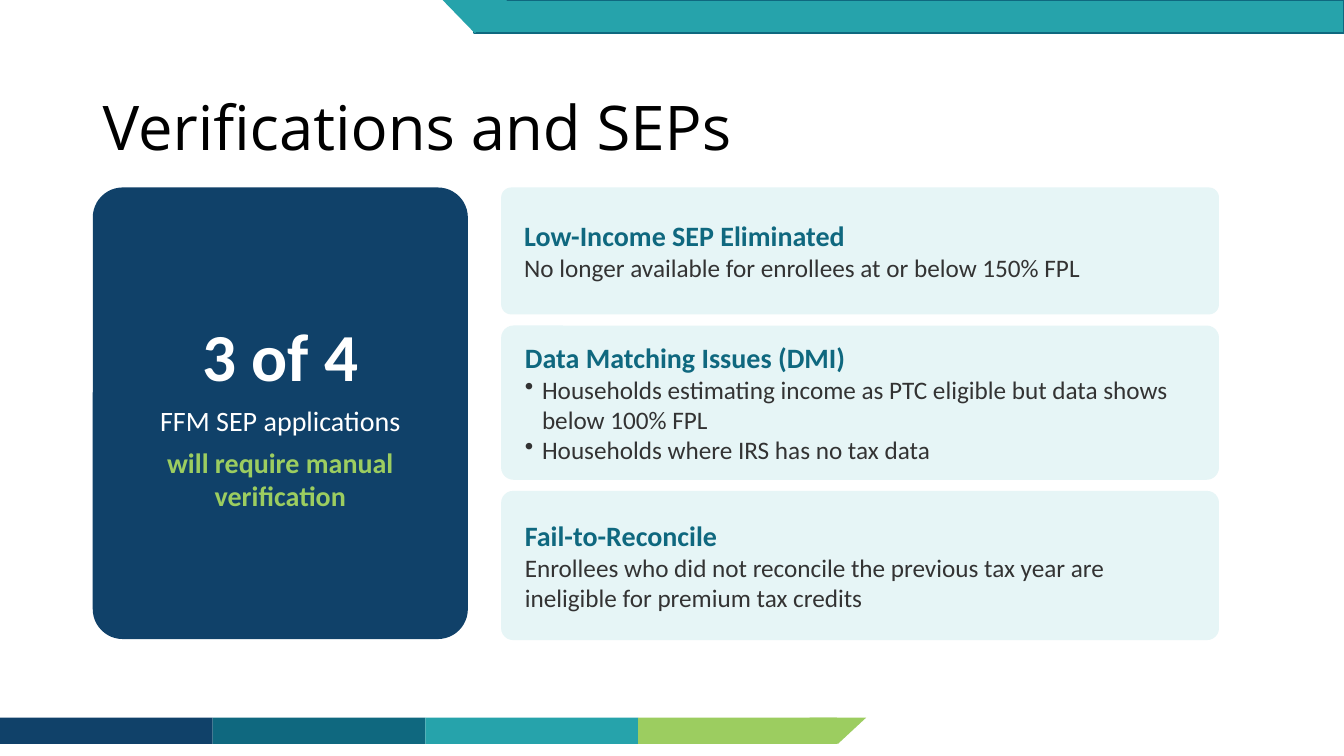
"""Builds the slide on verifications and special enrollment periods."""
from lxml import etree
from pptx import Presentation
from pptx.dml.color import RGBColor
from pptx.enum.shapes import MSO_SHAPE
from pptx.enum.text import MSO_ANCHOR, PP_ALIGN
from pptx.oxml.ns import qn
from pptx.util import Inches, Pt

TITLE = "Verifications and SEPs"
STAT = [
    ("3 of 4", "stat", {}),
    ("FFM SEP applications", "label", {"space_before": Pt(6), "space_after": Pt(6)}),
    ("will require manual verification", "stress", {}),
]
CARDS = [
    (1.26, "Low-Income SEP Eliminated",
     ["No longer available for enrollees at or below 150% FPL"]),
    (1.53, "Data Matching Issues (DMI)",
     ["Households estimating income as PTC eligible but data shows below 100% FPL",
      "Households where IRS has no tax data"]),
    (1.48, "Fail-to-Reconcile",
     ["Enrollees who did not reconcile the previous tax year are "
      "ineligible for premium tax credits"]),
]
BANDS = [("navy", 2.11), ("deep", 2.11), ("teal", 2.11), ("lime", 1.97)]


class Theme:
    """Colours and type styles of the slide."""

    color = {"navy": "104169", "deep": "0F687F", "teal": "26A3AB", "lime": "9CCD60",
             "pale": "E6F5F6", "white": "FFFFFF", "gray": "333333", "black": "000000"}
    style = {
        "title": ("Open Sans", 44, False, "black"),
        "stat": ("Calibri", 48, True, "white"),
        "label": ("Calibri", 20, False, "white"),
        "stress": ("Calibri", 20, True, "lime"),
        "head": ("Calibri", 20, True, "deep"),
        "body": ("Calibri", 18, False, "gray"),
    }


def tint(name):
    return RGBColor.from_string(Theme.color[name])


def assign(item, values):
    for key, value in values.items():
        setattr(item, key, value)


def add_box(slide, kind, area, fill, line=None, turn=0):
    box = slide.shapes.add_shape(kind, *map(Inches, area))
    box.shadow.inherit = False
    box.rotation = turn
    box.fill.solid()
    box.fill.fore_color.rgb = tint(fill)
    if line:
        box.line.color.rgb = tint(line)
        box.line.width = Pt(1)
    else:
        box.line.fill.background()
    return box


def add_bullet(para):
    props = para._p.get_or_add_pPr()
    props.set("marL", str(Inches(0.17)))
    props.set("indent", str(-Inches(0.17)))
    etree.SubElement(props, qn("a:buChar")).set("char", "•")


def write(frame, rows, align=PP_ALIGN.LEFT, dots=False):
    assign(frame, {"word_wrap": True, "vertical_anchor": MSO_ANCHOR.MIDDLE})
    for i, (text, style, extra) in enumerate(rows):
        para = frame.add_paragraph() if i else frame.paragraphs[0]
        assign(para, {"alignment": align, **extra})
        if dots and style == "body":
            add_bullet(para)
        run = para.add_run()
        run.text = text
        face, size, bold, color = Theme.style[style]
        assign(run.font, {"name": face, "size": Pt(size), "bold": bold})
        run.font.color.rgb = tint(color)


def add_panel(slide, area, fill, rows, **look):
    panel = add_box(slide, MSO_SHAPE.ROUNDED_RECTANGLE, area, fill)
    panel.adjustments[0] = 0.08
    assign(panel.text_frame, {"margin_left": Inches(0.2), "margin_right": Inches(0.2),
                              "margin_top": Inches(0.11), "margin_bottom": Inches(0.11)})
    write(panel.text_frame, rows, **look)


def add_trim(slide):
    left = 0
    for color, width in BANDS:
        add_box(slide, MSO_SHAPE.RECTANGLE, (left, 7.12, width, 0.26), color)
        left += width
    tip = MSO_SHAPE.ISOSCELES_TRIANGLE
    add_box(slide, tip, (8.03, 7.12, 0.56, 0.26), "lime", turn=180)
    add_box(slide, MSO_SHAPE.RECTANGLE, (4.7, 0, 8.63, 0.33), "teal", line="deep")
    add_box(slide, tip, (4.39, 0, 0.64, 0.33), "teal", turn=180)


def main():
    deck = Presentation()
    assign(deck, {"slide_width": Inches(13.33), "slide_height": Inches(7.5)})
    slide = deck.slides.add_slide(deck.slide_layouts[6])
    add_trim(slide)
    title = slide.shapes.add_textbox(*map(Inches, (0.92, 0.57, 11.5, 1.45)))
    write(title.text_frame, [(TITLE, "title", {"line_spacing": 0.9})])
    top, gap = 1.86, 0.11
    add_panel(slide, (0.92, top, 3.72, 4.48), "navy", STAT, align=PP_ALIGN.CENTER)
    for height, head, lines in CARDS:
        rows = [(head, "head", {})] + [(line, "body", {}) for line in lines]
        add_panel(slide, (4.97, top, 7.12, height), "pale", rows, dots=len(lines) > 1)
        top += height + gap
    deck.save("out.pptx")


if __name__ == "__main__":
    main()
